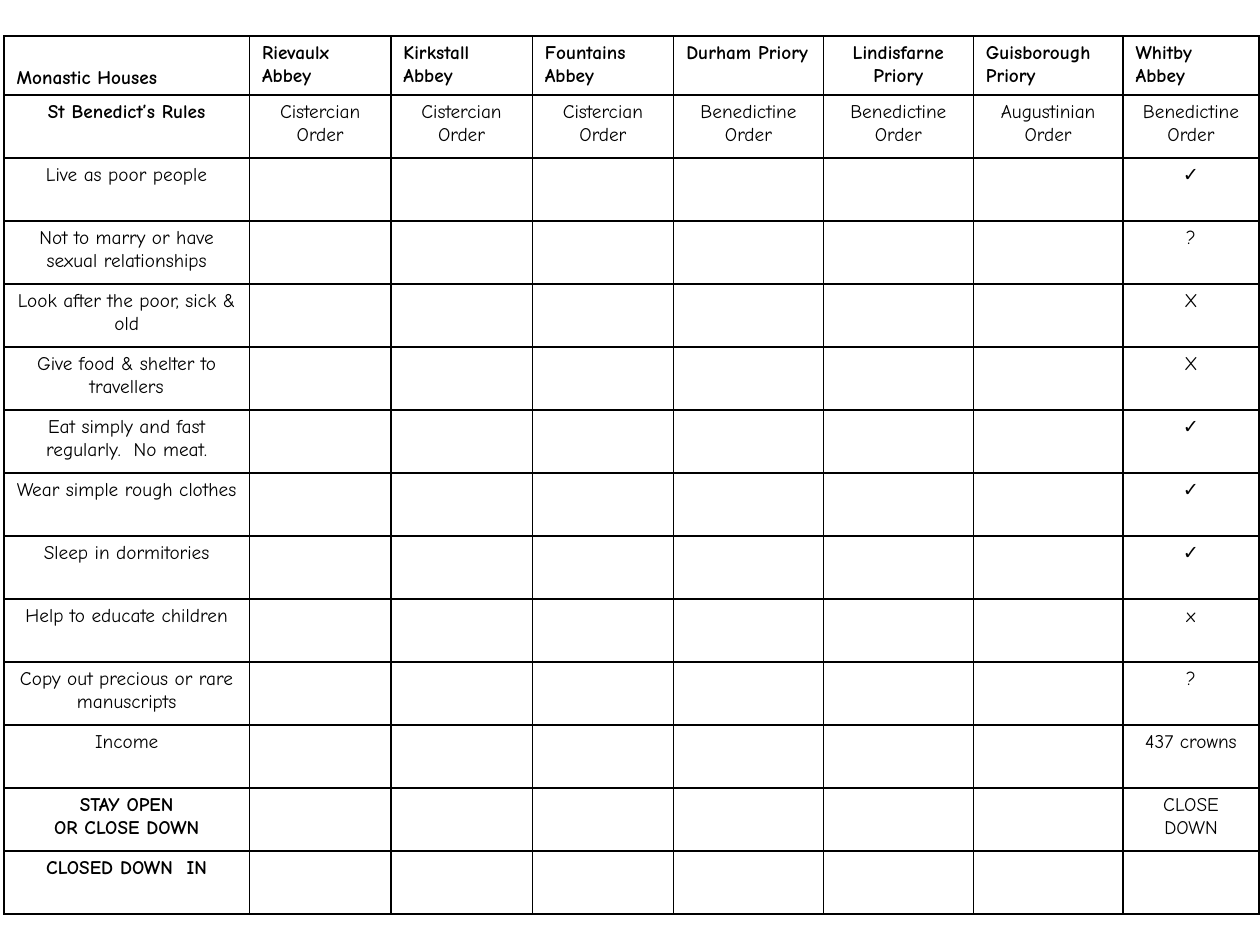
from lxml.etree import SubElement
from pptx import Presentation
from pptx.dml.color import RGBColor
from pptx.enum.text import MSO_ANCHOR, PP_ALIGN
from pptx.oxml.ns import qn
from pptx.util import Cm, Pt

BLACK = RGBColor(0, 0, 0)
WHITE = RGBColor(255, 255, 255)
FONT = "Comic Neue"

houses = [
    ("Rievaulx Abbey", "Cistercian"),
    ("Kirkstall Abbey", "Cistercian"),
    ("Fountains Abbey", "Cistercian"),
    ("Durham Priory", "Benedictine"),
    ("Lindisfarne Priory", "Benedictine"),
    ("Guisborough Priory", "Augustinian"),
    ("Whitby Abbey", "Benedictine"),
]
# Each rule with its answer for Whitby Abbey, the worked example
rules = [
    ("Live as poor people", "✓"),
    ("Not to marry or have sexual relationships", "?"),
    ("Look after the poor, sick & old", "X"),
    ("Give food & shelter to travellers", "X"),
    ("Eat simply and fast regularly.  No meat.", "✓"),
    ("Wear simple rough clothes", "✓"),
    ("Sleep in dormitories", "✓"),
    ("Help to educate children", "x"),
    ("Copy out precious or rare manuscripts", "?"),
    ("Income", "437 crowns"),
    ("STAY OPEN\nOR CLOSE DOWN", "CLOSE DOWN"),
    ("CLOSED DOWN  IN", ""),
]
widths = [4.95] + [2.85] * 3 + [3.02] * 3 + [2.74]
heights = [1.19] + [1.27] * (len(rules) + 1)


def write(cell, text, bold=False, align=PP_ALIGN.CENTER, anchor=MSO_ANCHOR.TOP):
    cell.text = text
    cell.vertical_anchor = anchor
    for para in cell.text_frame.paragraphs:
        para.alignment = align
        para.font.size = Pt(11)
        for run in para.runs:
            run.font.name = FONT
            run.font.size = Pt(11)
            run.font.bold = bold
            run.font.color.rgb = BLACK


def frame(cell):
    """Give the cell a thin line on all four sides and a plain fill."""
    props = cell._tc.get_or_add_tcPr()
    for side in ("a:lnL", "a:lnR", "a:lnT", "a:lnB"):
        line = SubElement(props, qn(side), w=str(Pt(1)))
        fill = SubElement(line, qn("a:solidFill"))
        SubElement(fill, qn("a:srgbClr"), val=str(BLACK))
    cell.fill.solid()
    cell.fill.fore_color.rgb = WHITE


deck = Presentation()
deck.slide_width = Cm(25.4)
deck.slide_height = Cm(19.05)
slide = deck.slides.add_slide(deck.slide_layouts[6])

table = slide.shapes.add_table(
    len(heights), len(widths), Cm(0.08), Cm(0.73),
    Cm(sum(widths)), Cm(sum(heights))).table
table.first_row = False
table.horz_banding = False
for col, width in zip(table.columns, widths):
    col.width = Cm(width)
for row, height in zip(table.rows, heights):
    row.height = Cm(height)
for cell in table.iter_cells():
    frame(cell)

# Headings
write(table.cell(0, 0), "Monastic Houses", bold=True,
      align=PP_ALIGN.LEFT, anchor=MSO_ANCHOR.BOTTOM)
write(table.cell(1, 0), "St Benedict’s Rules", bold=True)
for c, (house, order) in enumerate(houses, 1):
    centred = house == "Lindisfarne Priory"
    write(table.cell(0, c), house, bold=True,
          align=PP_ALIGN.CENTER if centred else PP_ALIGN.LEFT)
    write(table.cell(1, c), f"{order} Order")

# Rules and answers
last = len(widths) - 1
for r, (rule, answer) in enumerate(rules, 2):
    write(table.cell(r, 0), rule, bold=rule.isupper())
    write(table.cell(r, last), answer)

deck.save("out.pptx")
